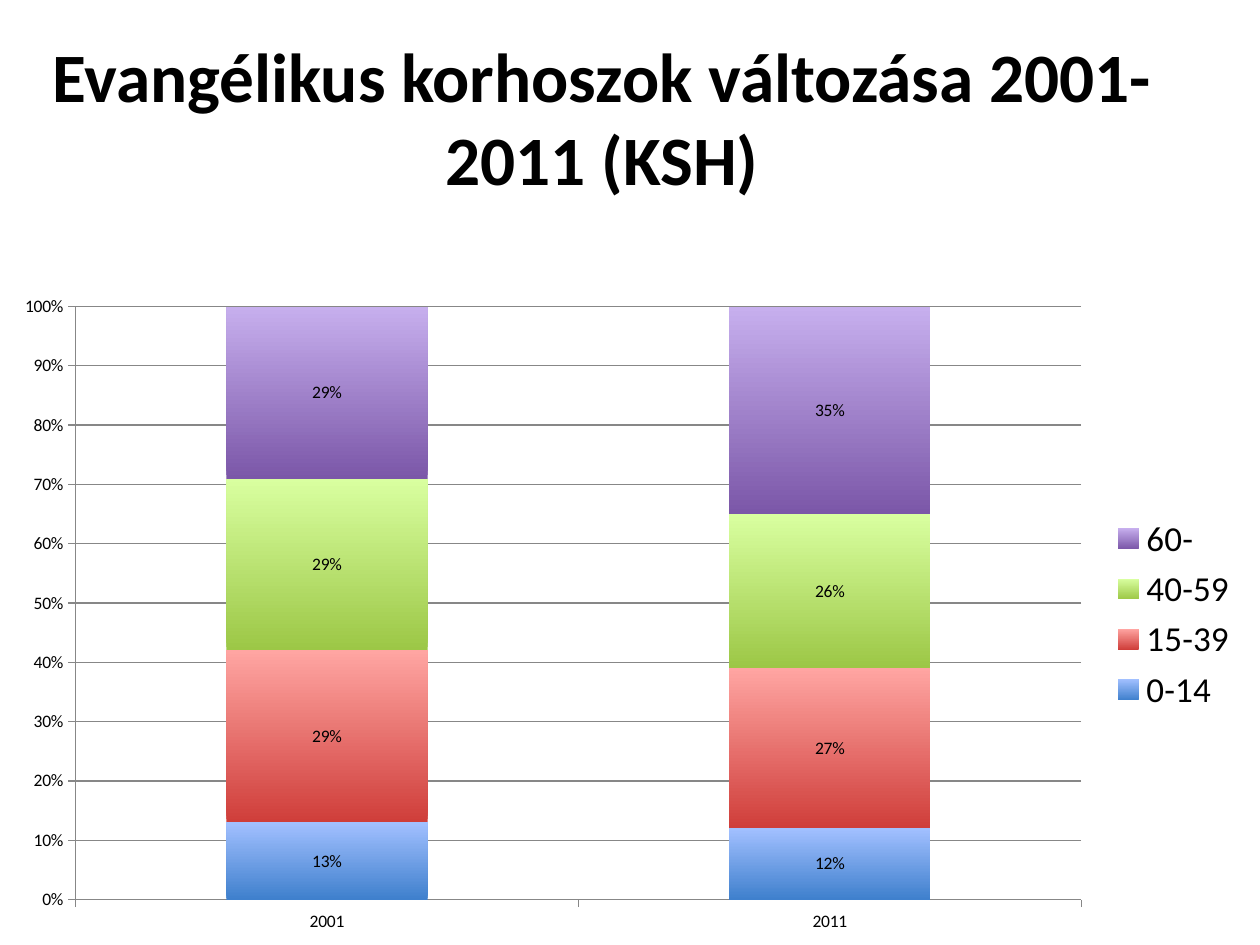
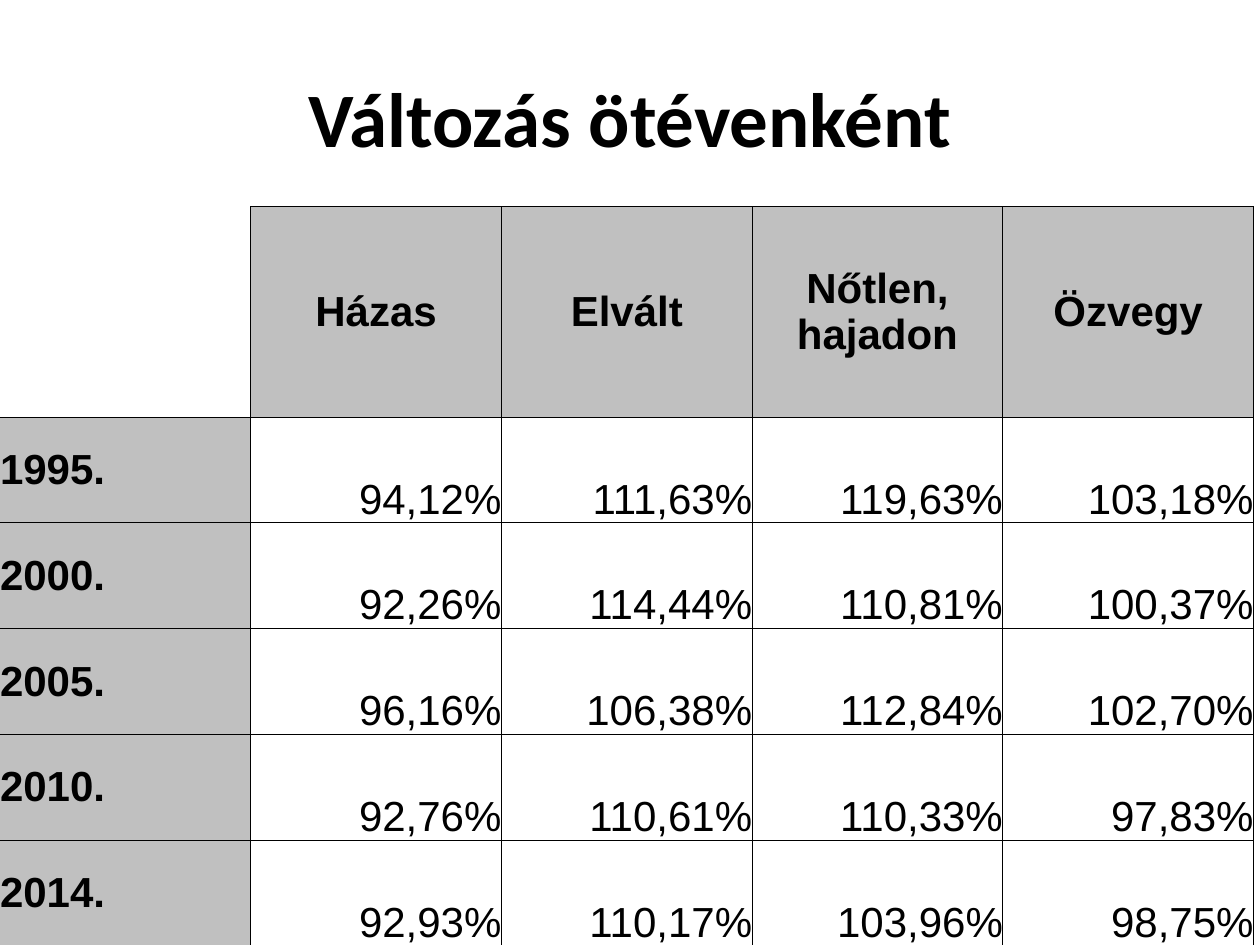
from lxml import etree
from pptx import Presentation
from pptx.chart.data import CategoryChartData
from pptx.dml.color import RGBColor
from pptx.enum.chart import XL_CHART_TYPE, XL_LEGEND_POSITION, XL_TICK_MARK
from pptx.enum.text import MSO_ANCHOR, PP_ALIGN
from pptx.oxml.ns import qn
from pptx.util import Inches, Pt

STACKED = XL_CHART_TYPE.COLUMN_STACKED_100
LEGEND_RIGHT = XL_LEGEND_POSITION.RIGHT
TICK_OUT = XL_TICK_MARK.OUTSIDE
MIDDLE, BOTTOM = MSO_ANCHOR.MIDDLE, MSO_ANCHOR.BOTTOM
LEFT, CENTER, RIGHT = PP_ALIGN.LEFT, PP_ALIGN.CENTER, PP_ALIGN.RIGHT

SLIDE_W, SLIDE_H = Inches(10), Inches(7.5)
TITLE_TOP, TITLE_H = 0.04, 1 / 6
BLACK, GRID_GRAY, HEADER_GRAY = "000000", "878787", "C0C0C0"
HEADING_FONT, TABLE_FONT = "Calibri", "Arial"
COLUMN_W, ROW_H = Inches(1.99), Inches(0.84)

YEARS = ["2001", "2011"]
AGE_GROUPS = [
    ("0-14", (0.13, 0.12), "A2C0FF", "3F80CD"),
    ("15-39", (0.29, 0.27), "FFA5A2", "CF3E3A"),
    ("40-59", (0.29, 0.26), "D9FFA0", "9CC746"),
    ("60-", (0.29, 0.35), "C7AFEE", "7B57A8"),
]
MARITAL_CHANGES = [
    ["", "Házas", "Elvált", "Nőtlen, hajadon", "Özvegy"],
    ["1995.", "94,12%", "111,63%", "119,63%", "103,18%"],
    ["2000.", "92,26%", "114,44%", "110,81%", "100,37%"],
    ["2005.", "96,16%", "106,38%", "112,84%", "102,70%"],
    ["2010.", "92,76%", "110,61%", "110,33%", "97,83%"],
    ["2014.", "92,93%", "110,17%", "103,96%", "98,75%"],
]


def color(value):
    """Turn a hex string into a colour."""
    return RGBColor.from_string(value)


def style_font(font, size, name=HEADING_FONT, bold=False):
    """Give a font its face, size and weight in black."""
    font.name, font.size, font.bold = name, Pt(size), bold
    font.color.rgb = color(BLACK)


def write(frame, text, align=LEFT, **font_format):
    """Write one formatted paragraph into a text frame."""
    frame.word_wrap = True
    paragraph = frame.paragraphs[0]
    paragraph.alignment = align
    run = paragraph.add_run()
    run.text = text
    style_font(run.font, **font_format)


def add_title(slide, text, left, width, size):
    """Add a centred bold heading, placed by shares of the slide."""
    box = slide.shapes.add_textbox(int(SLIDE_W * left), int(SLIDE_H * TITLE_TOP),
                                   int(SLIDE_W * width), int(SLIDE_H * TITLE_H))
    box.text_frame.vertical_anchor = MIDDLE
    write(box.text_frame, text, align=CENTER, size=size, bold=True)


def style_axis(axis):
    """Draw an axis with a gray line and outer ticks."""
    axis.major_tick_mark = TICK_OUT
    axis.format.line.color.rgb = color(GRID_GRAY)
    axis.format.line.width = Pt(0.75)
    style_font(axis.tick_labels.font, 10)


def style_age_group(series, top_color, bottom_color):
    """Fill a series from top to bottom and show its shares."""
    fill = series.format.fill
    fill.gradient()
    fill.gradient_angle = 90
    for stop, shade in zip(fill.gradient_stops, (bottom_color, top_color)):
        stop.color.rgb = color(shade)
    labels = series.data_labels
    labels.show_value = True
    labels.number_format, labels.number_format_is_linked = "0%", False
    style_font(labels.font, 10)


def add_age_chart(slide):
    """Add the stacked chart of age groups."""
    data = CategoryChartData(number_format="0%")
    data.categories = YEARS
    for name, shares, *_ in AGE_GROUPS:
        data.add_series(name, shares)
    top = int(SLIDE_H * 0.3)
    chart = slide.shapes.add_chart(STACKED, 0, top, Inches(9.93),
                                   SLIDE_H - top, data).chart
    style_font(chart.font, 10)
    chart.has_title = False
    chart.has_legend = True
    chart.legend.position = LEGEND_RIGHT
    chart.legend.include_in_layout = False
    style_font(chart.legend.font, 20)
    style_axis(chart.category_axis)
    shares_axis = chart.value_axis
    style_axis(shares_axis)
    shares_axis.tick_labels.number_format = "0%"
    shares_axis.tick_labels.number_format_is_linked = False
    gridline = shares_axis.major_gridlines.format.line
    gridline.color.rgb = color(GRID_GRAY)
    gridline.width = Pt(0.75)
    plot = chart.plots[0]
    plot.vary_by_categories = False
    plot.gap_width, plot.overlap = 150, 100
    for series, (_, _, top_color, bottom_color) in zip(plot.series, AGE_GROUPS):
        style_age_group(series, top_color, bottom_color)


def set_borders(cell, visible):
    """Draw the named sides of a cell and hide the others."""
    properties = cell._tc.get_or_add_tcPr()
    for side in "LRTB":
        line = etree.SubElement(properties, qn(f"a:ln{side}"), w=str(Pt(0.5)))
        if side in visible:
            paint = etree.SubElement(line, qn("a:solidFill"))
            etree.SubElement(paint, qn("a:srgbClr"), val=BLACK)
        else:
            etree.SubElement(line, qn("a:noFill"))


def fill_cell(cell, text, row, column):
    """Format a cell by its place in the table."""
    hidden = ("L" if column == 0 else "") + ("T" if row + column == 0 else "")
    if (row, column) == (len(MARITAL_CHANGES) - 1, 0):
        hidden += "B"
    set_borders(cell, set("LRTB") - set(hidden))
    cell.margin_left = cell.margin_right = cell.margin_top = cell.margin_bottom = 0
    is_header = row == 0 or column == 0
    cell.vertical_anchor = MIDDLE if is_header else BOTTOM
    if is_header and text:
        cell.fill.solid()
        cell.fill.fore_color.rgb = color(HEADER_GRAY)
    else:
        cell.fill.background()
    if text:
        align = CENTER if row == 0 else LEFT if column == 0 else RIGHT
        write(cell.text_frame, text, align=align, size=24, name=TABLE_FONT,
              bold=is_header)


def add_change_table(slide):
    """Add the table of changes by marital status."""
    row_count, column_count = len(MARITAL_CHANGES), len(MARITAL_CHANGES[0])
    height = ROW_H * (row_count + 1)
    table = slide.shapes.add_table(row_count, column_count, 0, Inches(1.64),
                                   COLUMN_W * column_count, height).table
    table.first_row = table.horz_banding = False
    for column in table.columns:
        column.width = COLUMN_W
    for index, row in enumerate(table.rows):
        row.height = ROW_H if index else Inches(1.67)
    for row, texts in enumerate(MARITAL_CHANGES):
        for column, text in enumerate(texts):
            fill_cell(table.cell(row, column), text, row, column)


def main():
    """Build both slides and save them."""
    deck = Presentation()
    deck.slide_width, deck.slide_height = SLIDE_W, SLIDE_H
    blank = deck.slide_layouts[6]

    ages = deck.slides.add_slide(blank)
    add_title(ages, "Evangélikus korhoszok változása 2001-2011 (KSH)",
              left=0.006, width=0.944, size=39.6)
    add_age_chart(ages)

    changes = deck.slides.add_slide(blank)
    add_title(changes, "Változás ötévenként", left=0.05, width=0.9, size=44)
    add_change_table(changes)

    deck.save("out.pptx")


if __name__ == "__main__":
    main()
